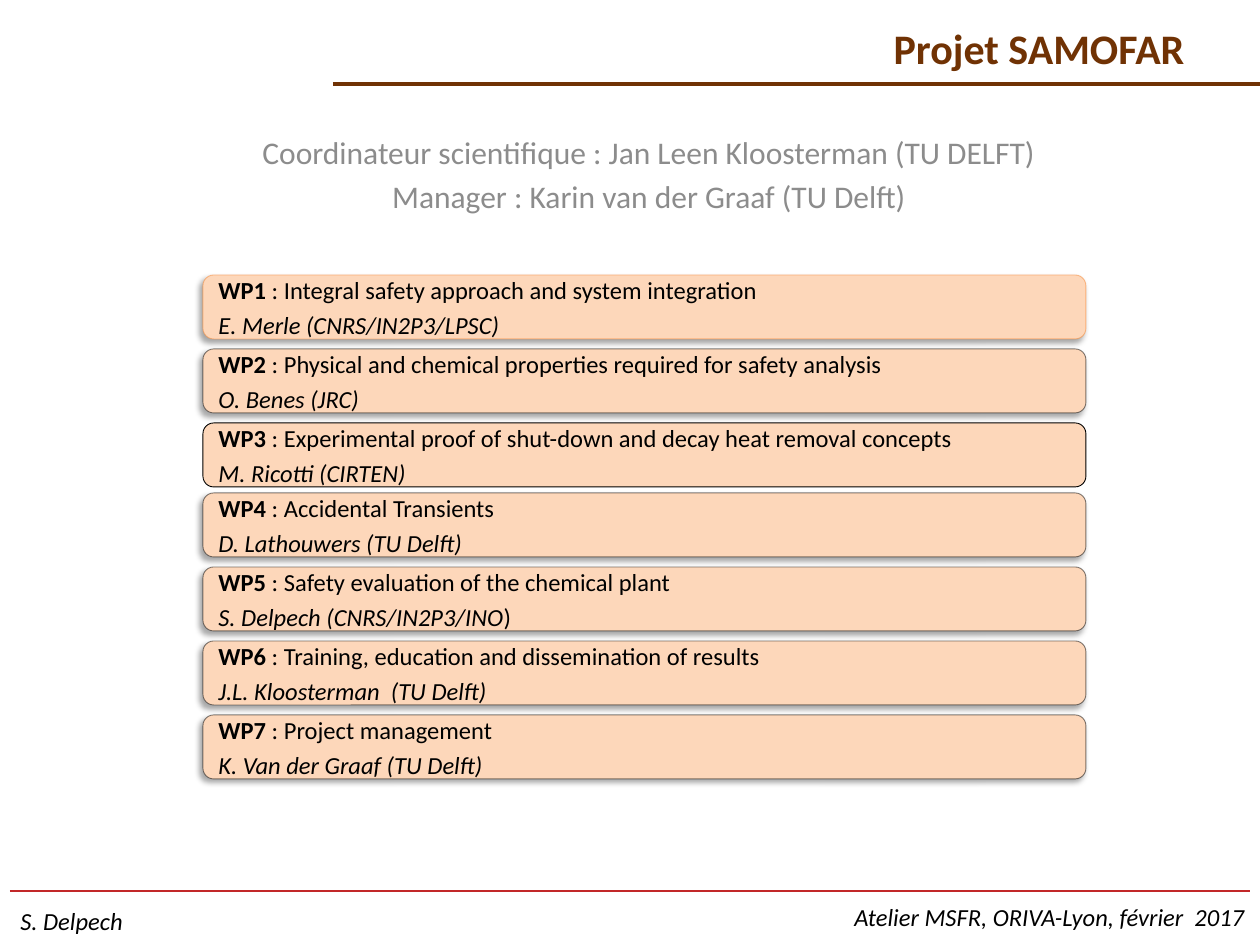
import pptx
import pptx.util
import pptx.dml.color
import pptx.enum.shapes
import pptx.enum.text
import pptx.oxml
import pptx.oxml.ns

PX = 914400 / 126  # EMU in one px
FONT = "Calibri"
BROWN, RED, GREY, BLACK = "703204", "C22829", "8C8C8C", "000000"
PEACH, ORANGE = "FDD7BA", "F88631"
ALIGN = pptx.enum.text.PP_ALIGN
ANCHOR = pptx.enum.text.MSO_ANCHOR

TITLE = "Projet SAMOFAR"
LEADERS = [
    "Coordinateur scientifique : Jan Leen Kloosterman (TU DELFT)",
    "Manager : Karin van der Graaf (TU Delft)",
]
# work package, subject, person in charge (italic), upright ending
PACKAGES = [
    ("WP1", "Integral safety approach and system integration", "E. Merle (CNRS/IN2P3/LPSC)", ""),
    ("WP2", "Physical and chemical properties required for safety analysis", "O. Benes (JRC)", ""),
    ("WP3", "Experimental proof of shut-down and decay heat removal concepts", "M. Ricotti (CIRTEN)", ""),
    ("WP4", "Accidental Transients", "D. Lathouwers (TU Delft)", ""),
    ("WP5", "Safety evaluation of the chemical plant", "S. Delpech (CNRS/IN2P3/INO", ")"),
    ("WP6", "Training, education and dissemination of results", "J.L. Kloosterman  (TU Delft)", ""),
    ("WP7", "Project management", "K. Van der Graaf (TU Delft)", ""),
]
FLAT_CARD = "WP3"  # solid outline, no shadow, smaller gap below
OUTLINES = {"WP1": ORANGE}
CARD_LEFT, CARD_TOP, CARD_WIDTH, CARD_HEIGHT = 203, 275, 883, 64
CARD_GAP, FLAT_GAP = 10, 6
FOOTERS = [
    ("S. Delpech", (8, 900, 129, 43)),
    ("Atelier MSFR, ORIVA-Lyon, février  2017", (842, 896, 433, 43)),
]
LINES = [((10, 891), (1250, 891), RED, 0.75), ((333, 84), (1260, 84), BROWN, 2)]


def emu(px):
    return pptx.util.Emu(round(px * PX))


def color(value):
    return pptx.dml.color.RGBColor.from_string(value)


def style(font, size, value, bold=False, italic=False):
    font.name = FONT
    font.size = pptx.util.Pt(size)
    font.color.rgb = color(value)
    font.bold = bold
    font.italic = italic


def add_run(paragraph, text, **emphasis):
    run = paragraph.add_run()
    run.text = text
    style(run.font, 14, BLACK, **emphasis)


def parse_drawing(xml):
    return pptx.oxml.parse_xml(xml.replace(" ", f" {pptx.oxml.ns.nsdecls('a')} ", 1))


def soften(card):
    """Make the outline half transparent and add a soft shadow."""
    outline = card.line.fill.fore_color
    fill = card.line._ln.find(pptx.oxml.ns.qn("a:solidFill"))
    fill[0].append(parse_drawing('<a:alpha val="49000"/>'))
    effects = card._element.spPr.find(pptx.oxml.ns.qn("a:effectLst"))
    effects.append(parse_drawing(
        f'<a:outerShdw blurRad="{pptx.util.Pt(3.1)}" dist="{pptx.util.Pt(2.8)}" '
        f'dir="{138 * 60000}" rotWithShape="0">'
        '<a:srgbClr val="000000"><a:alpha val="35000"/></a:srgbClr></a:outerShdw>'))


def add_text_box(slide, box):
    frame = slide.shapes.add_textbox(*map(emu, box)).text_frame
    frame.word_wrap = True
    return frame


def add_title(slide):
    title = slide.shapes.title
    title.left, title.top, title.width, title.height = map(emu, (63, 16, 1134, 136))
    frame = title.text_frame
    frame.text = TITLE
    frame.vertical_anchor = ANCHOR.TOP
    frame.paragraphs[0].alignment = ALIGN.RIGHT
    style(frame.paragraphs[0].runs[0].font, 24, BROWN, bold=True)


def add_leaders(slide):
    frame = add_text_box(slide, (63, 127, 1172, 242))
    frame.text = "\n".join(LEADERS)
    for index, paragraph in enumerate(frame.paragraphs):
        paragraph.alignment = ALIGN.CENTER
        if index:
            paragraph.space_before = pptx.util.Pt(3.6)
        style(paragraph.runs[0].font, 18, GREY)


def add_card(slide, top, package):
    code, subject, person, ending = package
    card = slide.shapes.add_shape(
        pptx.enum.shapes.MSO_SHAPE.ROUNDED_RECTANGLE,
        *map(emu, (CARD_LEFT, top, CARD_WIDTH, CARD_HEIGHT)))
    card.shadow.inherit = False
    card.fill.solid()
    card.fill.fore_color.rgb = color(PEACH)
    card.line.color.rgb = color(OUTLINES.get(code, BLACK))
    card.line.width = pptx.util.Pt(0.5)
    if code != FLAT_CARD:
        soften(card)
    frame = card.text_frame
    frame.word_wrap = True
    frame.vertical_anchor = ANCHOR.MIDDLE
    heading, lead = frame.paragraphs[0], frame.add_paragraph()
    heading.alignment = lead.alignment = ALIGN.LEFT
    heading.space_after = pptx.util.Pt(3)
    add_run(heading, code, bold=True)
    add_run(heading, f" : {subject}")
    add_run(lead, person, italic=True)
    if ending:
        add_run(lead, ending)


def add_cards(slide):
    top = CARD_TOP
    for package in PACKAGES:
        add_card(slide, top, package)
        top += CARD_HEIGHT + (FLAT_GAP if package[0] == FLAT_CARD else CARD_GAP)


def add_footers(slide):
    for text, box in FOOTERS:
        frame = add_text_box(slide, box)
        frame.word_wrap = False
        frame.text = text
        style(frame.paragraphs[0].runs[0].font, 14, BLACK, italic=True)


def add_lines(slide):
    for start, end, value, width in LINES:
        line = slide.shapes.add_connector(
            pptx.enum.shapes.MSO_CONNECTOR.STRAIGHT, *map(emu, start + end))
        line.line.color.rgb = color(value)
        line.line.width = pptx.util.Pt(width)
        line._element.spPr.append(parse_drawing("<a:effectLst />"))


def main():
    presentation = pptx.Presentation()
    presentation.slide_width, presentation.slide_height = emu(1260), emu(945)
    slide = presentation.slides.add_slide(presentation.slide_layouts[5])
    add_footers(slide)
    add_title(slide)
    add_leaders(slide)
    add_cards(slide)
    add_lines(slide)
    presentation.save("out.pptx")


if __name__ == "__main__":
    main()
